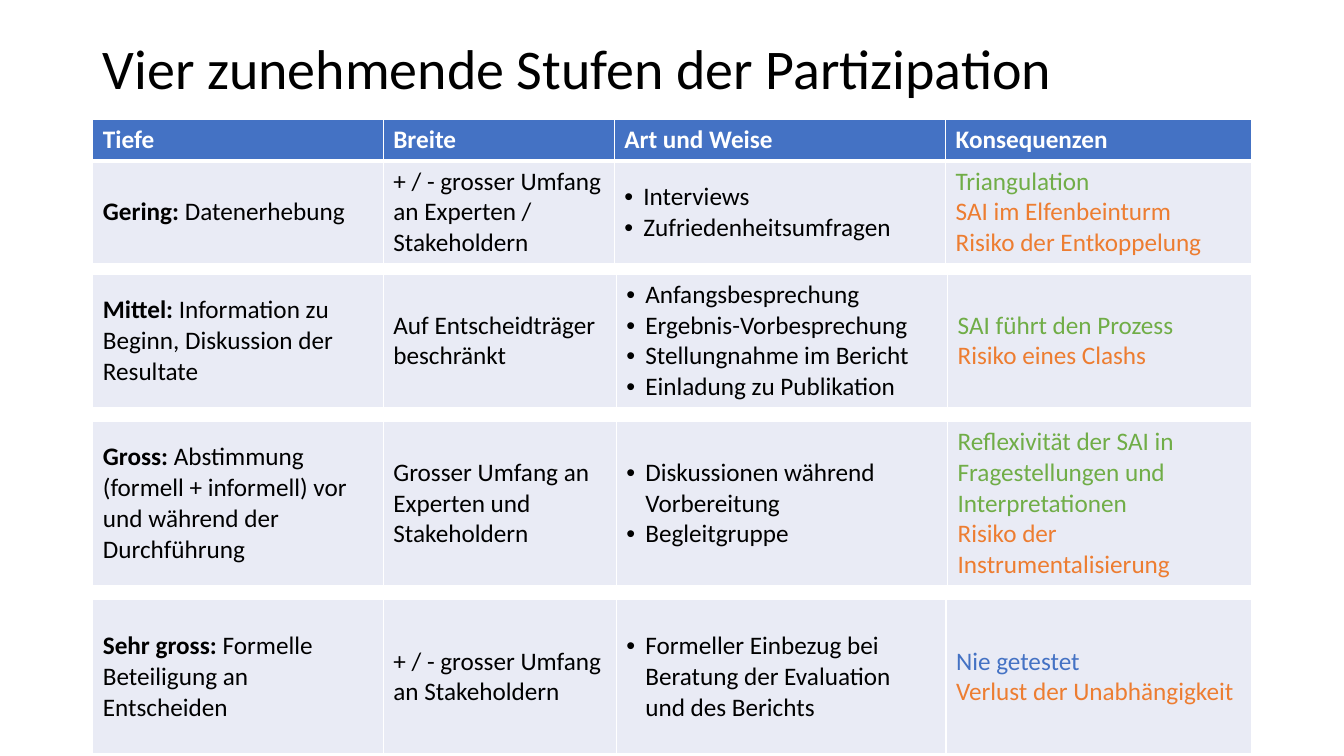
from lxml.etree import SubElement
from pptx import Presentation
from pptx.dml.color import RGBColor
from pptx.enum.text import MSO_ANCHOR, MSO_AUTO_SIZE, PP_ALIGN
from pptx.oxml.ns import qn
from pptx.util import Cm, Pt

TITLE = "Vier zunehmende Stufen der Partizipation"
HEADER = ["Tiefe", "Breite", "Art und Weise", "Konsequenzen"]
LEVELS = [
    {"top": 3.02, "height": 2.56, "cols": (7.32, 5.82, 8.35, 7.72),
     "depth": ("Gering: ", "Datenerhebung"),
     "breadth": "+ / - grosser Umfang an Experten / Stakeholdern",
     "ways": ["Interviews", "Zufriedenheitsumfragen"],
     "effects": [("good", "Triangulation"),
                 ("risk", "SAI im Elfenbeinturm\vRisiko der Entkoppelung")]},
    {"top": 6.91, "height": 3.3, "cols": (7.32, 5.87, 8.35, 7.67),
     "depth": ("Mittel: ", "Information zu Beginn, Diskussion der Resultate"),
     "breadth": "Auf Entscheidträger beschränkt",
     "ways": ["Anfangsbesprechung", "Ergebnis-Vorbesprechung",
              "Stellungnahme im Bericht", "Einladung zu Publikation"],
     "effects": [("good", "SAI führt den Prozess"), ("risk", "Risiko eines Clashs")]},
    {"top": 10.62, "height": 4.06, "cols": (7.32, 5.87, 8.35, 7.67),
     "depth": ("Gross: ", "Abstimmung (formell + informell) vor und während der Durchführung"),
     "breadth": "Grosser Umfang an Experten und Stakeholdern",
     "ways": ["Diskussionen während Vorbereitung", "Begleitgruppe"],
     "effects": [("good", "Reflexivität der SAI in Fragestellungen und Interpretationen"),
                 ("risk", "Risiko der Instrumentalisierung")]},
    {"top": 15.11, "height": 3.89, "cols": (7.32, 5.87, 8.31, 7.71),
     "depth": ("Sehr gross: ", "Formelle Beteiligung an Entscheiden"),
     "breadth": "+ / - grosser Umfang an Stakeholdern",
     "ways": ["Formeller Einbezug bei Beratung der Evaluation und des Berichts"],
     "effects": [("accent", "Nie getestet"), ("risk", "Verlust der Unabhängigkeit")]},
]
THEME = {"font": "Calibri", "title": 40, "body": 18, "text": "000000", "white": "FFFFFF",
         "accent": "4472C4", "band": "E9EBF5", "good": "70AD47", "risk": "ED7D31"}
LEFT, WIDTH, HEAD_H, INDENT = 2.34, 29.21, 1.04, 0.48


def style(p, color="text", size="body", bold=False):
    for r in p.runs:
        values = {"name": THEME["font"], "size": Pt(THEME[size]), "bold": bold}
        for name, value in values.items():
            setattr(r.font, name, value)
        r.font.color.rgb = RGBColor.from_string(THEME[color])


def add_bullet(p):
    pPr = p._p.get_or_add_pPr()
    pPr.set("marL", str(Cm(INDENT)))
    pPr.set("indent", str(-Cm(INDENT)))
    SubElement(pPr, qn("a:buFont"), typeface="Arial")
    SubElement(pPr, qn("a:buChar"), char="•")


def format_cell(cell, fill, **widths):
    tcPr = cell._tc.get_or_add_tcPr()
    for side in "LRTB":
        ln = SubElement(tcPr, qn(f"a:ln{side}"), w=str(Pt(widths.get(side, 1))))
        SubElement(SubElement(ln, qn("a:solidFill")), qn("a:srgbClr"), val=THEME["white"])
    cell.fill.solid()
    cell.fill.fore_color.rgb = RGBColor.from_string(THEME[fill])


def write(cell, lines, bullets=False):
    tf = cell.text_frame
    for i, (color, text) in enumerate(lines):
        p = tf.add_paragraph() if i else tf.paragraphs[0]
        p.text = text
        style(p, color)
        if bullets:
            add_bullet(p)


def add_level(s, level, header):
    heights = [HEAD_H] * header + [level["height"]]
    tbl = s.shapes.add_table(len(heights), len(HEADER), Cm(LEFT), Cm(level["top"]),
                             Cm(WIDTH), Cm(sum(heights))).table
    tbl.first_row, tbl.horz_banding = header, False
    for col, width in zip(tbl.columns, level["cols"]):
        col.width = Cm(width)
    for row, height in zip(tbl.rows, heights):
        row.height = Cm(height)
    if header:
        for cell, text in zip(tbl.rows[0].cells, HEADER):
            format_cell(cell, "accent", B=3)
            cell.text = text
            style(cell.text_frame.paragraphs[0], "white", bold=True)

    cells = list(tbl.rows[len(heights) - 1].cells)
    for cell in cells:
        format_cell(cell, "band", T=3 if header else 1)
        cell.vertical_anchor = MSO_ANCHOR.MIDDLE
    depth, breadth, ways, effects = cells
    lead, detail = level["depth"]
    p = depth.text_frame.paragraphs[0]
    p.text = lead
    p.add_run().text = detail
    style(p)
    p.runs[0].font.bold = True
    write(breadth, [("text", level["breadth"])])
    write(ways, [("text", way) for way in level["ways"]], bullets=True)
    write(effects, level["effects"])


def main():
    """Build the slide on the four levels of participation."""
    prs = Presentation()
    prs.slide_width, prs.slide_height = Cm(33.87), Cm(19.05)
    s = prs.slides.add_slide(prs.slide_layouts[5])
    title = s.shapes.title
    box = {"left": LEFT, "top": 1.02, "width": WIDTH, "height": 1.57}
    for name, value in box.items():
        setattr(title, name, Cm(value))
    tf = title.text_frame
    tf.text = TITLE
    tf.auto_size, tf.vertical_anchor = MSO_AUTO_SIZE.NONE, MSO_ANCHOR.MIDDLE
    p = tf.paragraphs[0]
    p.alignment, p.line_spacing = PP_ALIGN.LEFT, 0.9
    style(p, size="title")
    for i, level in enumerate(LEVELS):
        add_level(s, level, header=i == 0)
    prs.save("out.pptx")


if __name__ == "__main__":
    main()
